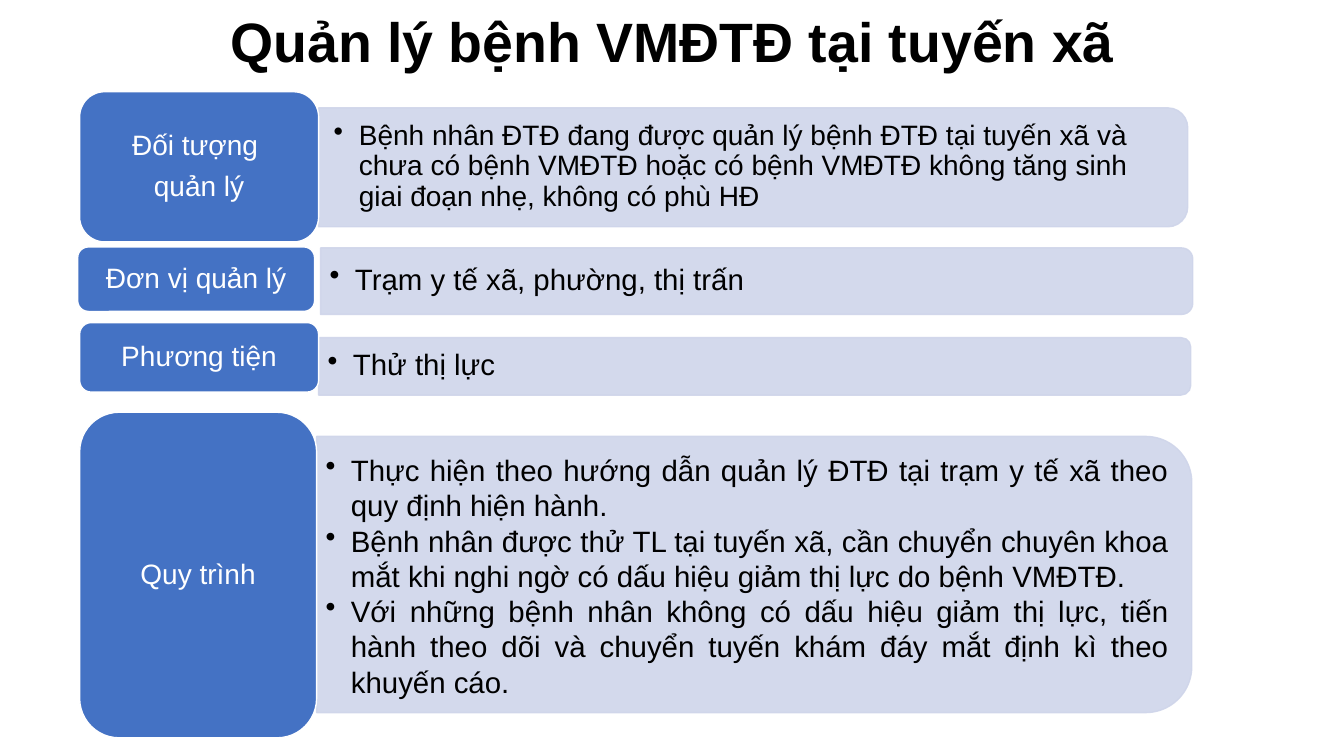
import pptx
import pptx.util
import pptx.dml.color
import pptx.enum.shapes
import pptx.enum.text
import pptx.oxml
import pptx.oxml.ns

PX = 9144  # 100 px to the inch
HUES = {"blue": "4472C4", "pale": "CFD5EA", "white": "FFFFFF", "black": "000000"}
KINDS = pptx.enum.shapes.MSO_SHAPE
ALIGN = pptx.enum.text.PP_ALIGN


def write(shape, lines, size, hue="black", bold=False, align=ALIGN.LEFT,
          lead=0.9, gap=0, pad=(8, 4), dot=False):
    frame = shape.text_frame
    frame.word_wrap = True
    frame.auto_size = pptx.enum.text.MSO_AUTO_SIZE.NONE
    frame.vertical_anchor = pptx.enum.text.MSO_ANCHOR.MIDDLE
    frame.margin_left = frame.margin_right = pad[0] * PX
    frame.margin_top = frame.margin_bottom = pad[1] * PX
    for i, line in enumerate(lines):
        para = frame.paragraphs[0] if i == 0 else frame.add_paragraph()
        run = para.add_run()
        run.text = line
        para.alignment = align
        para.line_spacing = lead
        para.space_before = pptx.util.Pt(0)
        para.space_after = pptx.util.Pt(gap if i < len(lines) - 1 else 0)
        if dot:
            para.level = 1
            props = para._p.get_or_add_pPr()
            props.set("marL", str(25 * PX))
            props.set("indent", str(-25 * PX))
            mark = pptx.oxml.parse_xml(
                '<a:buChar %s char="•"/>' % pptx.oxml.ns.nsdecls("a"))
            props.append(mark)
        run.font.name = "Arial"
        run.font.size = pptx.util.Pt(size)
        run.font.bold = bold
        run.font.color.rgb = pptx.dml.color.RGBColor.from_string(HUES[hue])


def block(kind, box, fill, edge, alpha=100):
    shape = slide.shapes.add_shape(kind, *[round(n * PX) for n in box])
    shape.shadow.inherit = False
    shape.line.width = pptx.util.Pt(1)
    shape.fill.solid()
    for paint, hue in ((shape.fill, fill), (shape.line.fill, edge)):
        paint.solid()
        paint.fore_color.rgb = pptx.dml.color.RGBColor.from_string(HUES[hue])
    if alpha < 100:
        for tone in shape._element.spPr.iter(pptx.oxml.ns.qn("a:srgbClr")):
            tone.append(pptx.oxml.parse_xml('<a:alpha %s val="%d"/>' % (
                pptx.oxml.ns.nsdecls("a"), alpha * 1000)))
    return shape


deck = pptx.Presentation()
deck.slide_width = 1333 * PX
deck.slide_height = 750 * PX
slide = deck.slides.add_slide(deck.slide_layouts[5])

# Title
title = slide.shapes.title
title.left, title.top, title.width, title.height = [
    n * PX for n in (92, 13, 1150, 62)]
write(title, ["Quản lý bệnh VMĐTĐ tại tuyến xã"], 39.6, bold=True,
      align=ALIGN.CENTER, pad=(10, 5))

# Rows: label box, label, panel box, text box, text, text format
rows = [
    ((79, 91, 237, 149), ["Đối tượng ", "quản lý"],
     (316, 107, 862, 118), (316, 112, 856, 107),
     ["Bệnh nhân ĐTĐ đang được quản lý bệnh ĐTĐ tại tuyến xã và chưa có bệnh "
      "VMĐTĐ hoặc có bệnh VMĐTĐ không tăng sinh giai đoạn nhẹ, không có phù HĐ"],
     {"size": 20, "pad": (15, 8)}),
    ((77, 245, 235, 64), ["Đơn vị quản lý"],
     (318, 246, 865, 66), (318, 249, 862, 59),
     ["Trạm y tế xã, phường, thị trấn"], {"size": 21, "pad": (9, 4)}),
    ((79, 320, 237, 69), ["Phương tiện"],
     (316, 335, 865, 57), (316, 337, 862, 52),
     ["Thử thị lực"], {"size": 21, "pad": (9, 4)}),
    ((79, 409, 235, 323), ["Quy trình"],
     (314, 433, 868, 274), (314, 447, 854, 248),
     ["Thực hiện theo hướng dẫn quản lý ĐTĐ tại trạm y tế xã theo quy định "
      "hiện hành.",
      "Bệnh nhân được thử TL tại tuyến xã, cần chuyển chuyên khoa mắt khi nghi "
      "ngờ có dấu hiệu giảm thị lực do bệnh VMĐTĐ.",
      "Với những bệnh nhân không có dấu hiệu giảm thị lực, tiến hành theo dõi "
      "và chuyển tuyến khám đáy mắt định kì theo khuyến cáo."],
     {"size": 21, "pad": (9, 4), "align": ALIGN.JUSTIFY, "lead": 1.0}),
]

for tag, name, area, place, text, form in rows:
    # Panel, turned so that its round corners face right
    x, y, w, h = area
    turned = (x + (w - h) / 2, y + (h - w) / 2, h, w)
    panel = block(KINDS.ROUND_2_SAME_RECTANGLE, turned, "pale", "pale", 90)
    panel.rotation = 90

    # Bulleted text
    body = slide.shapes.add_textbox(*[n * PX for n in place])
    write(body, text, dot=True, **form)

    # Label
    label = block(KINDS.ROUNDED_RECTANGLE, tag, "blue", "white")
    write(label, name, 20, hue="white", align=ALIGN.CENTER, gap=8)

deck.save("out.pptx")
